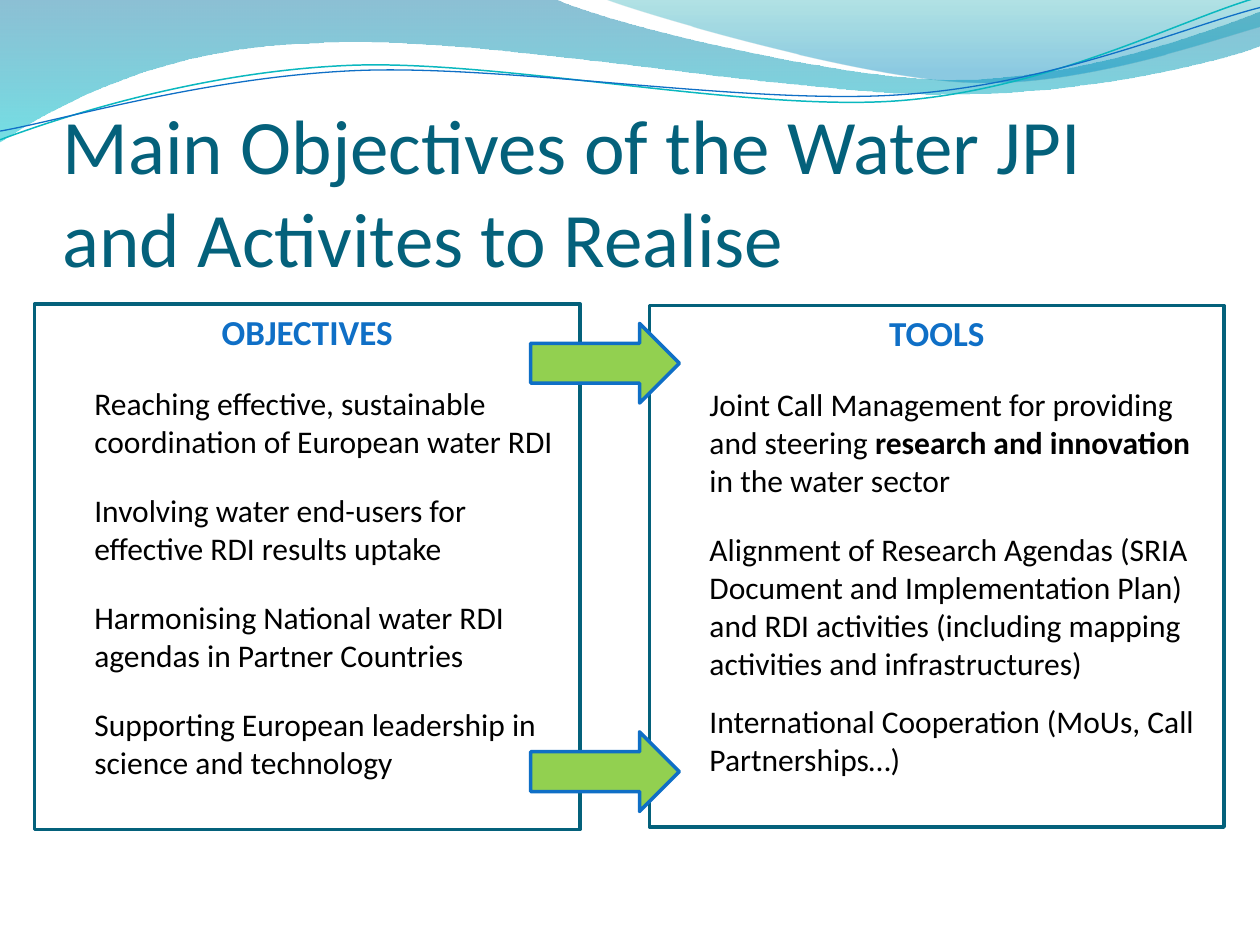
from dataclasses import dataclass

from lxml import etree
from pptx import Presentation
from pptx.dml.color import RGBColor
from pptx.enum import shapes, text
from pptx.oxml import ns
from pptx.util import Pt


@dataclass(frozen=True)
class Theme:
    font: str = "Calibri"
    title_size: int = 44
    heading_size: int = 20
    item_size: int = 18
    border: float = 2
    teal: str = "04617B"
    blue: str = "0F6FC6"
    aqua: str = "0AB8BF"
    green: str = "92D050"
    black: str = "000000"


@dataclass(frozen=True)
class Box:
    left: float
    top: float
    width: float
    height: float

    def lengths(self):
        return [Pt(side) for side in (self.left, self.top, self.width, self.height)]


THEME = Theme()

# Outlines in points: a pair is a straight step, six numbers are a cubic curve.
# Gradient stops hold position, colour and opacity in percent.
WAVES = [
    ([(0, 0), (316.8, -0.7), (342.7, 12.2, 478.1, 45.4, 545.8, 45.4),
      (614.2, 45.4, 689.8, 18.7, 720, 6.5), (720.7, 25.9),
      (707.8, 31.7, 626.4, 54.7, 537.1, 54), (447.8, 54, 275, 20.2, 185, 24.5),
      (92.9, 25.9, 33.1, 59.8, -0.7, 81.4)],
     [(0, "0074A1", 45), (100, "00C6CF", 55)]),
    ([(344.9, -0.7), (366.5, 7.9, 491, 44.6, 553.7, 46.8),
      (616.3, 49.7, 691.9, 23, 720, 15.1), (720, 0)],
     [(0, "00A1A9", 30), (80, "008BBF", 45)]),
]
RIPPLES = [
    ([(0, 79.9), (34.6, 67, 113.8, 41, 199.4, 37.4),
      (284.4, 33.8, 427, 64.1, 513.4, 57.6), (599.8, 51.1, 675.4, 10.8, 718.6, -1.4)],
     THEME.aqua, 0.85),
    ([(0, 74.9), (33.8, 69.1, 118.1, 43.9, 203.8, 40.3),
      (290.2, 36.7, 429.8, 60.5, 516.2, 54), (601.9, 48.2, 677.5, 15.1, 720, 4.3)],
     THEME.blue, 0.75),
]

# Each item: its runs as (words, bold), space before, space after.
OBJECTIVES = [([(words, False)], 12, 6) for words in (
    "Reaching effective, sustainable coordination of European water RDI",
    "Involving water end-users for effective RDI results uptake",
    "Harmonising National water RDI agendas in Partner Countries",
    "Supporting European leadership in science and technology",
)]
TOOLS = [
    ([("Joint Call Management for providing and steering ", False),
      ("research and innovation", True),
      (" in the water sector", False)], 12, 6),
    ([("Alignment of Research Agendas (SRIA Document and Implementation Plan) "
       "and RDI activities (including mapping activities and infrastructures)", False)], 12, 12),
    ([("International Cooperation (MoUs, Call Partnerships…)", False)], 0, 0),
]


def rgb(color):
    return RGBColor.from_string(color)


def place(shape, box):
    shape.left, shape.top, shape.width, shape.height = box.lengths()


def add_outline(page, box, outline, close):
    """Draw all points as straight steps, then join each curve's three steps into one."""
    points = [(Pt(box.left + part[i]), Pt(box.top + part[i + 1]))
              for part in outline for i in range(0, len(part), 2)]
    builder = page.shapes.build_freeform(*points[0])
    builder.add_line_segments(points[1:], close=close)
    shape = builder.convert_to_shape()
    shape.shadow.inherit = False
    steps = iter(list(shape._element.iter(ns.qn("a:lnTo"))))
    for part in outline[1:]:
        step = next(steps)
        if len(part) == 6:
            step.addprevious(curve := etree.Element(ns.qn("a:cubicBezTo")))
            for joined in (step, next(steps), next(steps)):
                curve.append(joined[0])
                joined.getparent().remove(joined)
    return shape


def add_waves(page, box):
    for outline, stops in WAVES:
        wave = add_outline(page, box, outline, close=True)
        wave.line.fill.background()
        wave.fill.gradient()
        wave.fill.gradient_angle = 270
        for stop, (position, color, opacity) in zip(wave.fill.gradient_stops, stops):
            stop.position = position / 100
            stop.color.rgb = rgb(color)
        colors = wave.fill._xPr.iter(ns.qn("a:srgbClr"))
        for element, (position, color, opacity) in zip(colors, stops):
            etree.SubElement(element, ns.qn("a:alpha"), val=str(opacity * 1000))
    for outline, color, width in RIPPLES:
        ripple = add_outline(page, box, outline, close=False)
        ripple.fill.background()
        ripple.line.color.rgb = rgb(color)
        ripple.line.width = Pt(width)


def add_run(para, words, size, color, bold=False):
    span = para.add_run()
    span.text = words
    span.font.name = THEME.font
    span.font.size = Pt(size)
    span.font.bold = bold
    span.font.color.rgb = rgb(color)


def fill_title(title, box, words):
    place(title, box)
    frame = title.text_frame
    frame.word_wrap = True
    frame.auto_size = text.MSO_AUTO_SIZE.NONE
    frame.vertical_anchor = text.MSO_ANCHOR.BOTTOM
    frame.margin_left = frame.margin_right = frame.margin_bottom = 0
    para = frame.paragraphs[0]
    para.alignment = text.PP_ALIGN.LEFT
    add_run(para, words, THEME.title_size, THEME.teal)


def set_plain(para, indent):
    """Take the bullet off a paragraph and set its left margin."""
    properties = para._p.get_or_add_pPr()
    properties.set("marL", str(Pt(indent)))
    properties.set("indent", "0")
    etree.SubElement(properties, ns.qn("a:buNone"))


def fill_panel(panel, box, heading, items):
    place(panel, box)
    panel.line.color.rgb = rgb(THEME.teal)
    panel.line.width = Pt(THEME.border)
    frame = panel.text_frame
    frame.word_wrap = True
    frame.auto_size = text.MSO_AUTO_SIZE.NONE
    para = frame.paragraphs[0]
    set_plain(para, 0)
    para.alignment = text.PP_ALIGN.CENTER
    para.space_before, para.space_after = Pt(0), Pt(6)
    add_run(para, heading, THEME.heading_size, THEME.blue, bold=True)
    for runs, before, after in items:
        para = frame.add_paragraph()
        set_plain(para, 27)
        para.space_before, para.space_after = Pt(before), Pt(after)
        for words, bold in runs:
            add_run(para, words, THEME.item_size, THEME.black, bold)


def add_arrow(page, box):
    arrow = page.shapes.add_shape(shapes.MSO_SHAPE.RIGHT_ARROW, *box.lengths())
    arrow.shadow.inherit = False
    arrow.fill.solid()
    arrow.fill.fore_color.rgb = rgb(THEME.green)
    arrow.line.color.rgb = rgb(THEME.blue)
    arrow.line.width = Pt(THEME.border)


def build_objectives_page(deck):
    page = deck.slides.add_slide(deck.slide_layouts.get_by_name("Two Content"))
    title, left_panel, right_panel = page.placeholders
    add_waves(page, Box(0, 0, 720, 82))
    fill_title(title, Box(35.8, 71.5, 648, 90),
               "Main Objectives of the Water JPI and Activites to Realise")
    fill_panel(left_panel, Box(19.7, 173.8, 311.8, 300.2), "OBJECTIVES", OBJECTIVES)
    fill_panel(right_panel, Box(371.2, 174.6, 328.3, 298), "TOOLS", TOOLS)
    for top in (184.8, 418.2):
        add_arrow(page, Box(303.2, top, 85, 45.5))


def main():
    deck = Presentation()
    deck.slide_width, deck.slide_height = Pt(720), Pt(540)
    build_objectives_page(deck)
    deck.save("out.pptx")


if __name__ == "__main__":
    main()
